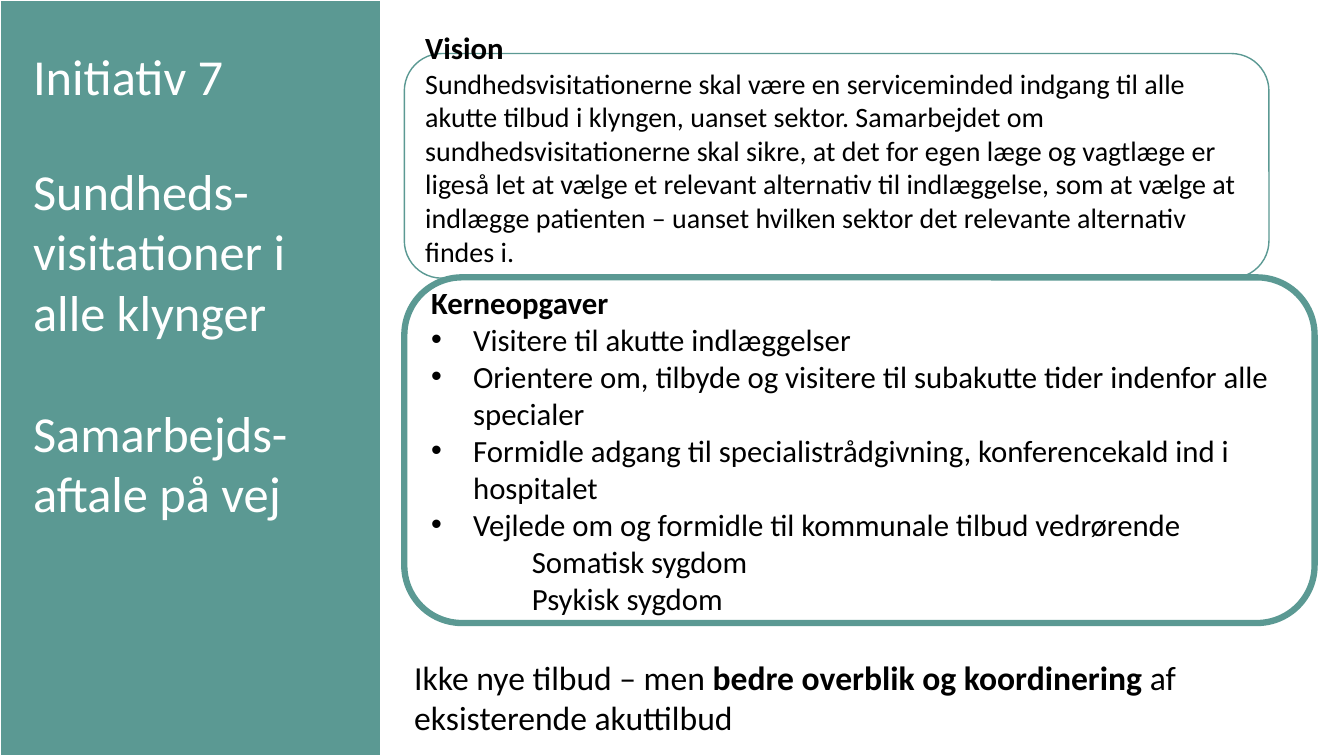
from dataclasses import dataclass

from lxml import etree
from pptx import Presentation
from pptx.dml.color import RGBColor
from pptx.enum.shapes import MSO_SHAPE
from pptx.enum.text import MSO_ANCHOR, MSO_AUTO_SIZE, PP_ALIGN
from pptx.oxml.ns import qn
from pptx.util import Cm, Pt

RECT, ROUND = MSO_SHAPE.RECTANGLE, MSO_SHAPE.ROUNDED_RECTANGLE
TOP, MIDDLE = MSO_ANCHOR.TOP, MSO_ANCHOR.MIDDLE
LEFT, NO_FIT = PP_ALIGN.LEFT, MSO_AUTO_SIZE.NONE


@dataclass(frozen=True)
class Theme:
    """Colours, font and type sizes of the slide."""
    teal: RGBColor = RGBColor(0x5B, 0x99, 0x93)
    white: RGBColor = RGBColor(0xFF, 0xFF, 0xFF)
    black: RGBColor = RGBColor(0, 0, 0)
    font: str = "Calibri"
    title: int = 36
    closing: int = 24
    heading: int = 22
    body: int = 20


T = Theme()


def add_run(p, text, size, color=T.black, bold=False):
    """Append a formatted run to a paragraph."""
    r = p.add_run()
    r.text = text
    r.font.name, r.font.size, r.font.bold = T.font, Pt(size), bold
    r.font.color.rgb = color


def next_paragraph(tf):
    """Return the empty first paragraph or a new one, aligned left."""
    p = tf.paragraphs[0] if not tf.paragraphs[0].runs else tf.add_paragraph()
    p.alignment = LEFT
    return p


def indent(p, left, hanging=0, bullet=None):
    """Set the indent of a paragraph and, if given, its bullet."""
    pPr = p._p.get_or_add_pPr()
    pPr.set("marL", str(Cm(left)))
    pPr.set("indent", str(Cm(-hanging)))
    if bullet:
        etree.SubElement(pPr, qn("a:buFont")).set("typeface", "Arial")
        etree.SubElement(pPr, qn("a:buChar")).set("char", bullet)


def add_panel(s, box, kind, fill, line, width):
    """Draw a filled, outlined panel and return it."""
    sp = s.shapes.add_shape(kind, *map(Cm, box))
    sp.shadow.inherit = False
    sp.fill.solid()
    sp.fill.fore_color.rgb = fill
    sp.line.color.rgb = line
    sp.line.width = Pt(width)
    sp.text_frame.word_wrap = True
    sp.text_frame.vertical_anchor = MIDDLE
    return sp


def add_sidebar(s, box, parts):
    """Draw the coloured sidebar with the title on it."""
    x, y, w, h = box
    panel = add_panel(s, box, RECT, T.teal, T.white, 1)
    title = s.shapes.title
    panel.element.addnext(title.element)
    title.left, title.top = Cm(x + 0.58), Cm(y + 1.02)
    title.width, title.height = Cm(w - 1.27), Cm(12.4)
    tf = title.text_frame
    tf.word_wrap, tf.auto_size, tf.vertical_anchor = True, NO_FIT, TOP
    for text, gap in parts:
        p = next_paragraph(tf)
        p.space_before = Pt(gap)
        add_run(p, text, T.title, T.white)


def add_vision(s, box, heading, text):
    """Draw the vision panel, its text raised above the middle."""
    tf = add_panel(s, box, ROUND, T.white, T.teal, 1).text_frame
    tf.margin_bottom = Cm(1)
    add_run(next_paragraph(tf), heading, T.heading, bold=True)
    add_run(next_paragraph(tf), text, T.body)


def add_tasks(s, box, heading, tasks, subtasks):
    """Draw the panel of core tasks with bullets and subtasks."""
    tf = add_panel(s, box, ROUND, T.white, T.teal, 4.5).text_frame
    add_run(next_paragraph(tf), heading, T.heading, bold=True)
    for task in tasks:
        p = next_paragraph(tf)
        indent(p, 1.06, 1.06, "•")
        add_run(p, task, T.heading)
    for subtask in subtasks:
        p = next_paragraph(tf)
        p.level = 1
        indent(p, 2.54)
        add_run(p, subtask, T.heading)


def add_closing(s, box, parts):
    """Write the closing statement, given as text and bold flags."""
    tf = s.shapes.add_textbox(*map(Cm, box)).text_frame
    tf.word_wrap = True
    p = next_paragraph(tf)
    for text, bold in parts:
        add_run(p, text, T.closing, bold=bold)


def main():
    """Build and save the slide."""
    prs = Presentation()
    prs.slide_width, prs.slide_height = Cm(33.87), Cm(19.05)
    s = prs.slides.add_slide(prs.slide_layouts[5])
    x = 10.19
    add_sidebar(s, (0, 0, 9.6, 19.05), [
        ("Initiativ 7", 0),
        ("Sundheds-visitationer i alle klynger", 38.4),
        ("Samarbejds-aftale på vej", 43.2),
    ])
    add_vision(
        s, (x, 1.35, 21.79, 5.66), "Vision",
        "Sundhedsvisitationerne skal være en serviceminded indgang til alle "
        "akutte tilbud i klyngen, uanset sektor. Samarbejdet om "
        "sundhedsvisitationerne skal sikre, at det for egen læge og vagtlæge "
        "er ligeså let at vælge et relevant alternativ til indlæggelse, som "
        "at vælge at indlægge patienten – uanset hvilken sektor det "
        "relevante alternativ findes i.")
    add_tasks(s, (x, 6.99, 22.94, 8.71), "Kerneopgaver", [
        "Visitere til akutte indlæggelser",
        "Orientere om, tilbyde og visitere til subakutte tider indenfor alle "
        "specialer",
        "Formidle adgang til specialistrådgivning, konferencekald ind i "
        "hospitalet",
        "Vejlede om og formidle til kommunale tilbud vedrørende",
    ], ["Somatisk sygdom", "Psykisk sygdom"])
    add_closing(s, (x, 16.43, 23.67, 2.31), [
        ("Ikke nye tilbud – men ", False),
        ("bedre overblik og koordinering ", True),
        ("af eksisterende akuttilbud", False),
    ])
    prs.save("out.pptx")


if __name__ == "__main__":
    main()
